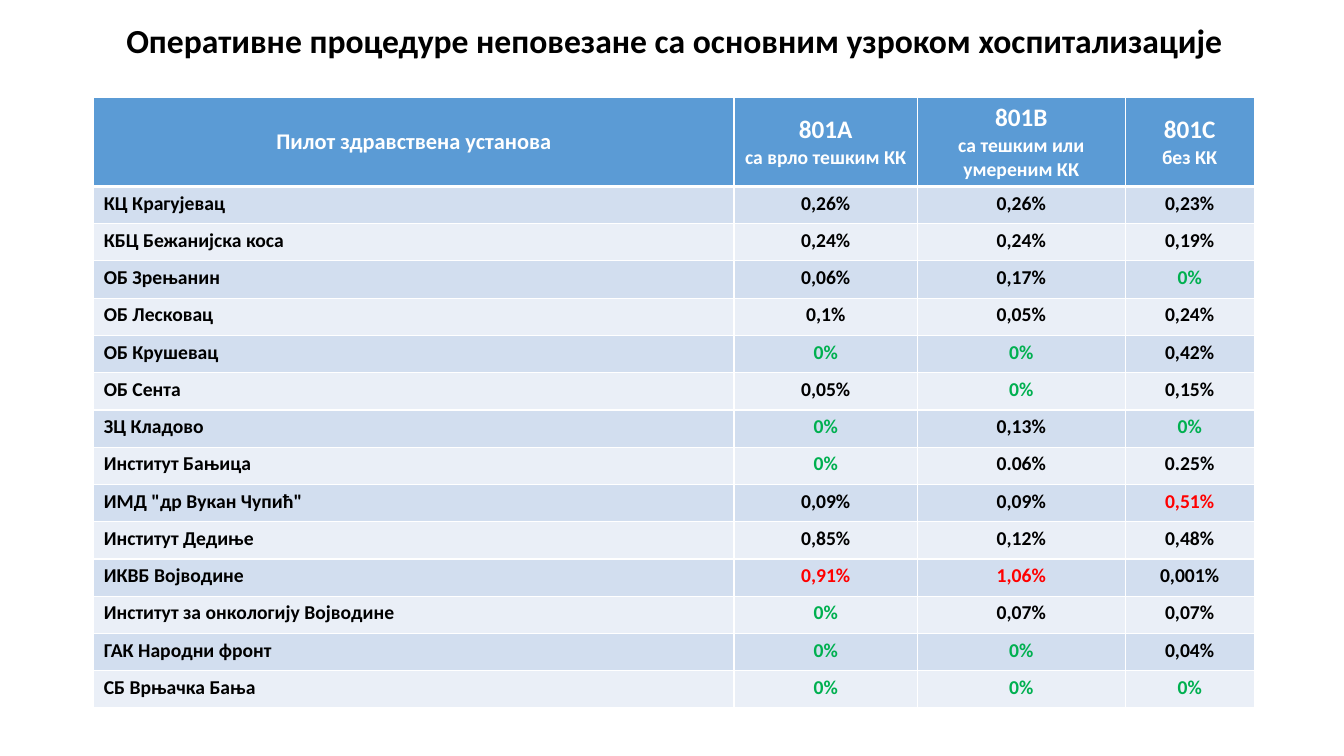
from dataclasses import dataclass

import pptx
import pptx.dml.color
import pptx.enum.text
import pptx.oxml
import pptx.oxml.ns
import pptx.util
from pptx.util import Inches

ALIGN = pptx.enum.text.PP_ALIGN
ANCHOR = pptx.enum.text.MSO_ANCHOR


@dataclass(frozen=True)
class Theme:
    font: str = "Calibri"
    text: str = "000000"
    white: str = "FFFFFF"
    header: str = "5B9BD5"
    bands: tuple = ("D2DEEF", "EAEFF7")
    zero: str = "00B050"
    highest: str = "FF0000"
    title_size: int = 24
    label_size: int = 16
    code_size: int = 18
    body_size: int = 14
    border: int = 1
    header_border: int = 3


TITLE = "Оперативне процедуре неповезане са основним узроком хоспитализације"
INSTITUTION = "Пилот здравствена установа"
GROUPS = [
    ("801А", "са врло тешким КК"),
    ("801B", "са тешким или умереним КК"),
    ("801C", "без КК"),
]
RATES = [
    ("КЦ Крагујевац", "0,26%", "0,26%", "0,23%"),
    ("КБЦ Бежанијска коса", "0,24%", "0,24%", "0,19%"),
    ("ОБ Зрењанин", "0,06%", "0,17%", "0%"),
    ("ОБ Лесковац", "0,1%", "0,05%", "0,24%"),
    ("ОБ Крушевац", "0%", "0%", "0,42%"),
    ("ОБ Сента", "0,05%", "0%", "0,15%"),
    ("ЗЦ Кладово", "0%", "0,13%", "0%"),
    ("Институт Бањица", "0%", "0.06%", "0.25%"),
    ("ИМД \"др Вукан Чупић\"", "0,09%", "0,09%", "0,51%"),
    ("Институт Дедиње", "0,85%", "0,12%", "0,48%"),
    ("ИКВБ Војводине", "0,91%", "1,06%", "0,001%"),
    ("Институт за онкологију Војводине", "0%", "0,07%", "0,07%"),
    ("ГАК Народни фронт", "0%", "0%", "0,04%"),
    ("СБ Врњачка Бања", "0%", "0%", "0%"),
]
COLUMN_WIDTHS = (6.35, 1.82, 2.06, 1.28)
HEADER_HEIGHT, ROW_HEIGHT = 0.82, 0.37


def percent(text):
    return float(text.rstrip("%").replace(",", "."))


class SlideBuilder:
    def __init__(self, prs, theme):
        self.theme = theme
        self.s = prs.slides.add_slide(prs.slide_layouts.get_by_name("Title Only"))

    def add_text(self, p, text, size, color, align):
        p.alignment = align
        r = p.add_run()
        r.text = text
        formats = {"name": self.theme.font, "size": pptx.util.Pt(size), "bold": True}
        for name, value in formats.items():
            setattr(r.font, name, value)
        r.font.color.rgb = pptx.dml.color.RGBColor.from_string(color)

    def title(self, text, left, top, width, height):
        sp = self.s.shapes.title
        box = {"left": left, "top": top, "width": width, "height": height}
        for name, value in box.items():
            setattr(sp, name, Inches(value))
        tf = sp.text_frame
        tf.word_wrap = True
        tf.vertical_anchor = ANCHOR.MIDDLE
        p = tf.paragraphs[0]
        p.line_spacing = 0.9
        self.add_text(p, text, self.theme.title_size, self.theme.text, ALIGN.CENTER)

    def borders(self, cell, **widths):
        """Draw white cell borders; widths are points for L, R, T and B."""
        tc_pr = cell._tc.get_or_add_tcPr()
        for side, width in widths.items():
            tc_pr.append(pptx.oxml.parse_xml(
                f'<a:ln{side} {pptx.oxml.ns.nsdecls("a")} w="{pptx.util.Pt(width)}">'
                f'<a:solidFill><a:srgbClr val="{self.theme.white}"/></a:solidFill>'
                f'</a:ln{side}>'))

    def cell(self, cell, lines, fill, color, align, top, bottom):
        """Fill one cell with lines of (text, size)."""
        thin = self.theme.border
        self.borders(cell, L=thin, R=thin, T=top, B=bottom)
        cell.fill.solid()
        cell.fill.fore_color.rgb = pptx.dml.color.RGBColor.from_string(fill)
        tf = cell.text_frame
        for i, (text, size) in enumerate(lines):
            p = tf.add_paragraph() if i else tf.paragraphs[0]
            self.add_text(p, text, size, color, align)

    def rate_table(self, left, top, groups, rows):
        t = self.theme
        table = self.s.shapes.add_table(
            len(rows) + 1, len(COLUMN_WIDTHS), Inches(left), Inches(top),
            Inches(sum(COLUMN_WIDTHS)),
            Inches(HEADER_HEIGHT + ROW_HEIGHT * len(rows))).table
        for column, width in zip(table.columns, COLUMN_WIDTHS):
            column.width = Inches(width)
        for i, row in enumerate(table.rows):
            row.height = Inches(ROW_HEIGHT if i else HEADER_HEIGHT)

        headings = [[(INSTITUTION, t.label_size)]]
        headings += [[(code, t.code_size), (note, t.body_size)] for code, note in groups]
        for col, lines in enumerate(headings):
            cell = table.cell(0, col)
            cell.vertical_anchor = ANCHOR.MIDDLE
            self.cell(cell, lines, t.header, t.white, ALIGN.CENTER,
                      t.border, t.header_border)

        highest = [max(map(percent, rates)) for rates in list(zip(*rows))[1:]]
        for i, row in enumerate(rows):
            for col, text in enumerate(row):
                color = t.text
                if col and percent(text) == 0:
                    color = t.zero
                elif col and percent(text) == highest[col - 1]:
                    color = t.highest
                self.cell(table.cell(i + 1, col), [(text, t.body_size)],
                          t.bands[i % 2], color,
                          ALIGN.CENTER if col else ALIGN.LEFT,
                          t.border if i else t.header_border, t.border)


def main():
    prs = pptx.Presentation()
    prs.slide_width, prs.slide_height = Inches(13.33), Inches(7.5)
    slide = SlideBuilder(prs, Theme())
    slide.title(TITLE, 0.71, 0, 11.96, 0.85)
    slide.rate_table(0.93, 0.97, GROUPS, RATES)
    prs.save("out.pptx")


if __name__ == "__main__":
    main()
